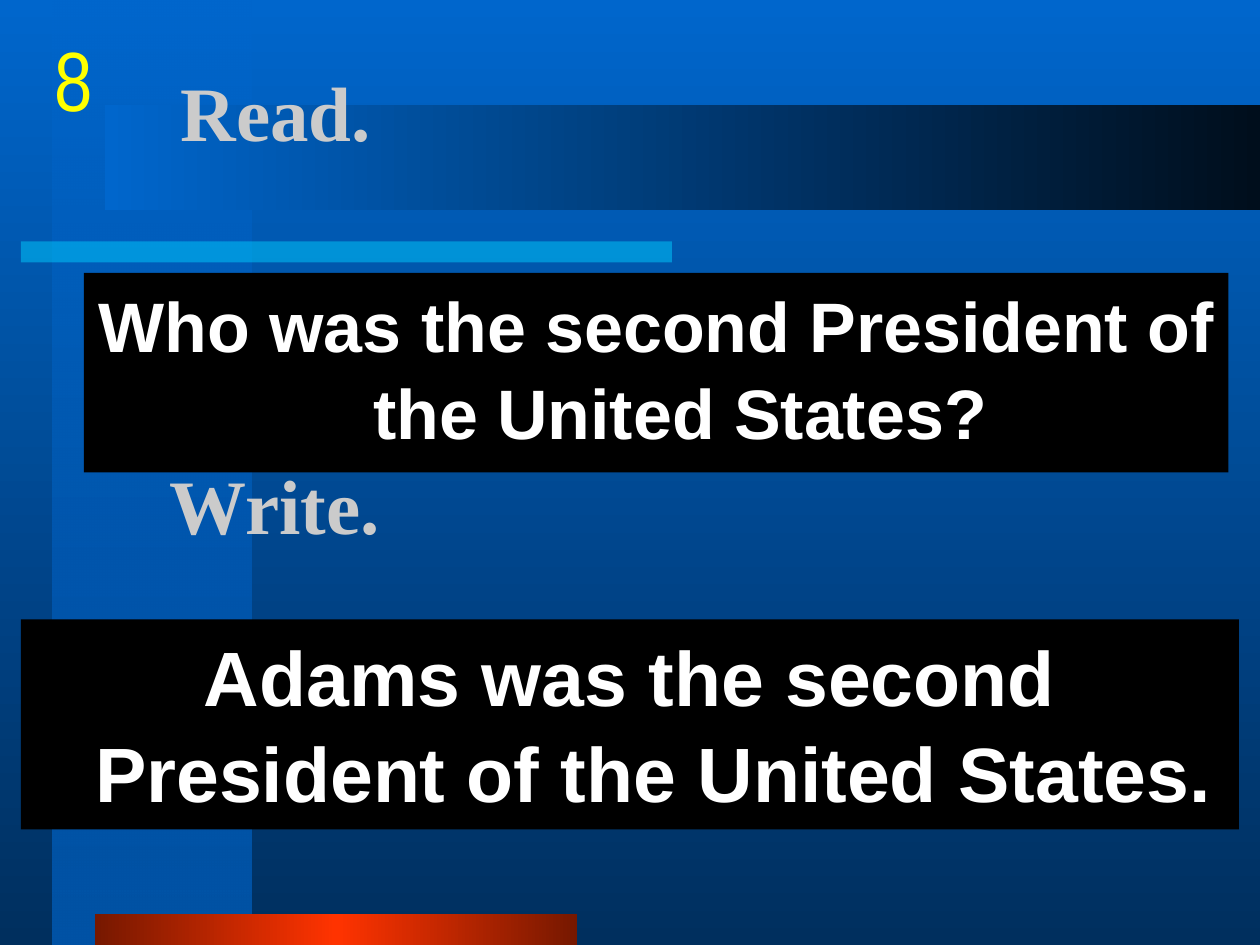
from dataclasses import dataclass

from pptx import Presentation
from pptx.dml.color import RGBColor
from pptx.enum.shapes import MSO_SHAPE
from pptx.enum.text import MSO_ANCHOR, PP_ALIGN
from pptx.oxml import parse_xml
from pptx.oxml.ns import nsdecls, qn
from pptx.util import Inches, Pt

COLUMNS, ROWS = 120, 90
CELL = Inches(10) // COLUMNS


@dataclass(frozen=True)
class Theme:
    blue: str = "0066CC"
    navy: str = "002F5E"
    stripe: str = "0053A6"
    night: str = "000E1C"
    cyan: str = "00CCFF"
    maroon: str = "761800"
    red: str = "FF3300"
    panel: str = "000000"
    heading: str = "CBCBCB"
    body: str = "FFFFFF"
    number: str = "FFFF00"
    heading_font: str = "Times New Roman"
    body_font: str = "Arial"
    number_font: str = "Arial Narrow"
    heading_size: int = 44
    question_size: int = 40
    answer_size: int = 44
    number_size: int = 48


THEME = Theme()


def grid(*cells):
    return [round(cell * CELL) for cell in cells]


def color_xml(color, alpha=100):
    return (f'<a:srgbClr {nsdecls("a")} val="{color}">'
            f'<a:alpha val="{alpha * 1000}"/></a:srgbClr>')


def paint_gradient(fill, element, stops, angle):
    fill.gradient()
    fill.gradient_angle = angle
    stop_list = next(element.iter(qn("a:gsLst")))
    for stop in list(stop_list):
        stop_list.remove(stop)
    for position, color, alpha in stops:
        stop_list.append(parse_xml(
            f'<a:gs {nsdecls("a")} pos="{position * 1000}">'
            f'{color_xml(color, alpha)}</a:gs>'))


def add_bar(slide, cells):
    shape = slide.shapes.add_shape(MSO_SHAPE.RECTANGLE, *grid(*cells))
    shape.shadow.inherit = False
    shape.line.fill.background()
    return shape


def add_solid_bar(slide, cells, color, alpha=100):
    shape = add_bar(slide, cells)
    shape.fill.solid()
    shape.fill.fore_color.rgb = RGBColor.from_string(color)
    if alpha < 100:
        solid = shape.element.spPr.find(qn("a:solidFill"))
        solid.replace(solid[0], parse_xml(color_xml(color, alpha)))
    return shape


def add_gradient_bar(slide, cells, stops, angle=0):
    shape = add_bar(slide, cells)
    paint_gradient(shape.fill, shape.element, stops, angle)


def write(shape, text, font, size, color, bold=True,
          align=PP_ALIGN.LEFT, anchor=MSO_ANCHOR.MIDDLE, wrap=True):
    frame = shape.text_frame
    frame.text = text
    frame.word_wrap = wrap
    frame.vertical_anchor = anchor
    paragraph = frame.paragraphs[0]
    paragraph.alignment = align
    run_font = paragraph.runs[0].font
    run_font.name = font
    run_font.size = Pt(size)
    run_font.bold = bold
    run_font.color.rgb = RGBColor.from_string(color)
    return paragraph


def write_heading(shape, text):
    write(shape, text, THEME.heading_font, THEME.heading_size, THEME.heading)


def add_heading(slide, cells, text):
    write_heading(slide.shapes.add_textbox(*grid(*cells)), text)


def add_title(slide, cells, text):
    title = slide.shapes.title
    title.left, title.top, title.width, title.height = grid(*cells)
    write_heading(title, text)
    tree = slide.shapes.element
    tree.remove(title.element)
    tree.append(title.element)


def add_panel(slide, cells, text, size):
    panel = add_solid_bar(slide, cells, THEME.panel)
    paragraph = write(panel, text, THEME.body_font, size, THEME.body,
                      align=PP_ALIGN.CENTER, anchor=MSO_ANCHOR.TOP)
    paragraph.space_before = Pt(2)
    paragraph.line_spacing = 1.04
    properties = paragraph._p.get_or_add_pPr()
    properties.set("marL", str(Inches(0.38)))
    properties.set("indent", str(-Inches(0.38)))


def add_number(slide, cells, text):
    box = slide.shapes.add_textbox(*grid(*cells))
    write(box, text, THEME.number_font, THEME.number_size, THEME.number,
          bold=False, align=PP_ALIGN.CENTER, anchor=MSO_ANCHOR.TOP, wrap=False)


def add_backdrop(slide):
    paint_gradient(slide.background.fill, slide.element,
                   [(0, THEME.blue, 100), (100, THEME.navy, 100)], 270)
    add_gradient_bar(slide, (5, 0, 19, ROWS),
                     [(0, THEME.blue, 50), (100, THEME.stripe, 100)], 270)
    add_solid_bar(slide, (2, 23, 62, 2), THEME.cyan, 50)
    add_gradient_bar(slide, (9, 87, 46, 3),
                     [(0, THEME.maroon, 100), (50, THEME.red, 100),
                      (100, THEME.maroon, 100)])
    add_gradient_bar(slide, (10, 10, 110, 10),
                     [(0, THEME.blue, 100), (100, THEME.night, 100)])


def main():
    presentation = Presentation()
    presentation.slide_width, presentation.slide_height = grid(COLUMNS, ROWS)
    slide = presentation.slides.add_slide(presentation.slide_layouts[5])
    add_backdrop(slide)
    add_title(slide, (16, 3, 102, 15), "Read.")
    add_panel(slide, (8, 26, 109, 19),
              "Who was the second President of the United States?",
              THEME.question_size)
    add_heading(slide, (15, 38, 102, 20), "Write.")
    add_panel(slide, (2, 59, 116, 20),
              "Adams was the second President of the United States.",
              THEME.answer_size)
    add_number(slide, (4, 2, 5, 10), "8")
    presentation.save("out.pptx")


if __name__ == "__main__":
    main()
